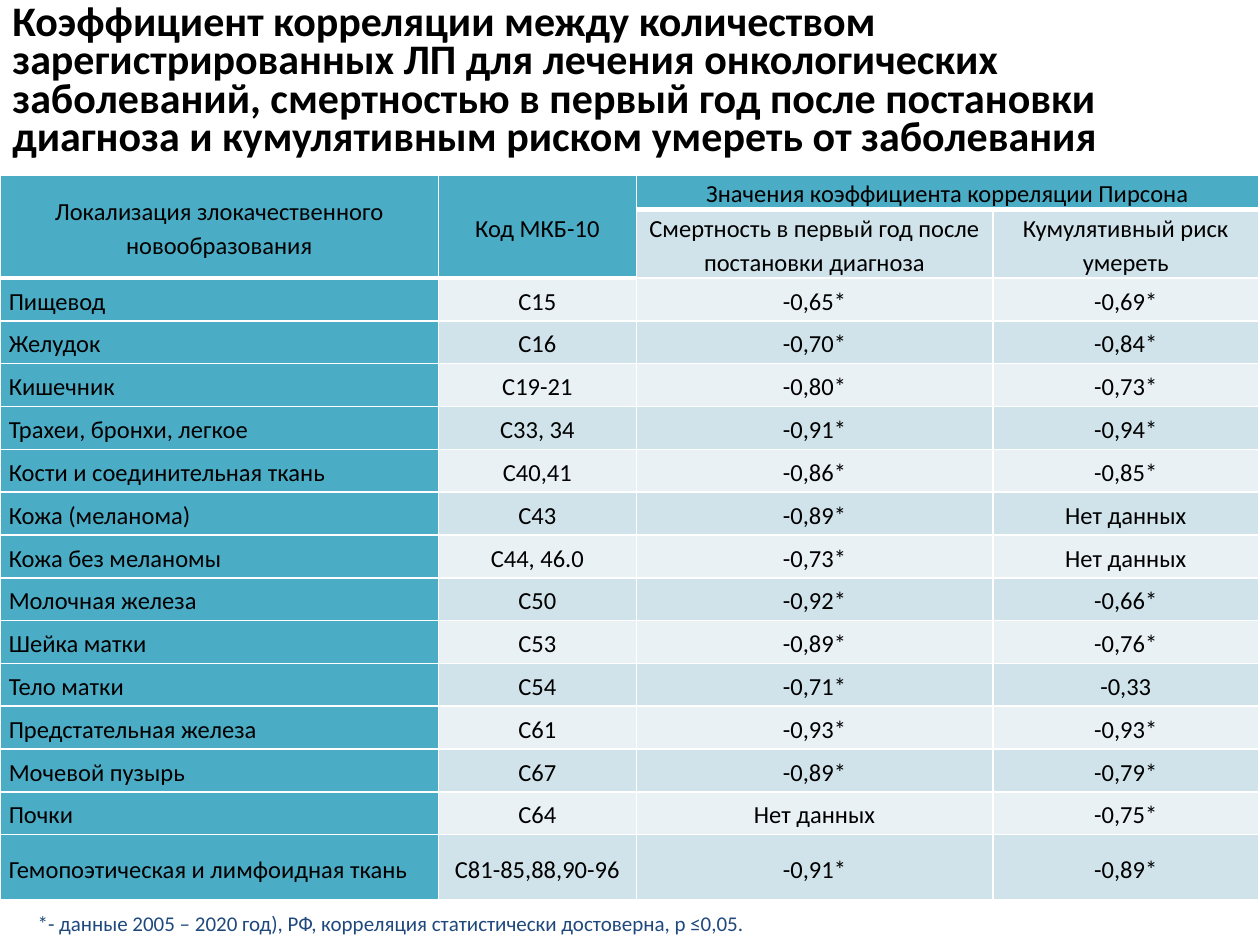
from pptx import Presentation
from pptx.dml.color import RGBColor
from pptx.enum.text import MSO_ANCHOR, PP_ALIGN
from pptx.oxml.ns import qn
from pptx.util import Inches, Pt
from lxml import etree

LEFT, CENTER, JUSTIFY = PP_ALIGN.LEFT, PP_ALIGN.CENTER, PP_ALIGN.JUSTIFY
MIDDLE = MSO_ANCHOR.MIDDLE

COLORS = {"accent": "4BACC6", "dark band": "D0E3EA", "light band": "E9F1F5",
          "border": "FFFFFF", "text": "000000", "note": "1F497D"}

# Content
TITLE = ("Коэффициент корреляции между количеством зарегистрированных ЛП для лечения "
         "онкологических заболеваний, смертностью в первый год после постановки "
         "диагноза и кумулятивным риском умереть от заболевания")
NOTE = "*- данные 2005 – 2020 год), РФ, корреляция статистически достоверна, р ≤0,05."
HEADER = [
    ("Локализация злокачественного новообразования", "Код МКБ-10",
     "Значения коэффициента корреляции Пирсона", ""),
    ("", "", "Смертность в первый год после постановки диагноза",
     "Кумулятивный риск умереть"),
]
CORRELATIONS = [
    ("Пищевод", "С15", "-0,65*", "-0,69*"),
    ("Желудок", "С16", "-0,70*", "-0,84*"),
    ("Кишечник", "C19-21", "-0,80*", "-0,73*"),
    ("Трахеи, бронхи, легкое", "C33, 34", "-0,91*", "-0,94*"),
    ("Кости и соединительная ткань", "C40,41", "-0,86*", "-0,85*"),
    ("Кожа (меланома)", "C43", "-0,89*", "Нет данных"),
    ("Кожа без меланомы", "C44, 46.0", "-0,73*", "Нет данных"),
    ("Молочная железа", "C50", "-0,92*", "-0,66*"),
    ("Шейка матки", "C53", "-0,89*", "-0,76*"),
    ("Тело матки", "C54", "-0,71*", "-0,33"),
    ("Предстательная железа", "C61", "-0,93*", "-0,93*"),
    ("Мочевой пузырь", "C67", "-0,89*", "-0,79*"),
    ("Почки", "C64", "Нет данных", "-0,75*"),
    ("Гемопоэтическая и лимфоидная ткань", "C81-85,88,90-96", "-0,91*", "-0,89*"),
]
ROWS = HEADER + CORRELATIONS
COLUMN_WIDTHS = [3.48, 1.57, 2.83, 2.11]
ROW_HEIGHTS = [0.25, 0.53] + [0.34] * (len(CORRELATIONS) - 1) + [0.52]
MERGES = [((0, 0), (1, 0)), ((0, 1), (1, 1)), ((0, 2), (0, 3))]


def write(frame, text, size=14, color="text", bold=False, align=LEFT, spacing=1.15):
    para = frame.paragraphs[0]
    para.alignment = align
    para.line_spacing = spacing
    span = para.add_run()
    span.text = text
    span.font.name = "Calibri"
    span.font.size = Pt(size)
    span.font.bold = bold
    span.font.color.rgb = RGBColor.from_string(COLORS[color])


def add_text(page, area, text, wrap=True, **style):
    box = page.shapes.add_textbox(*map(Inches, area))
    box.text_frame.word_wrap = wrap
    write(box.text_frame, text, **style)


def set_borders(cell, bottom):
    properties = cell._tc.get_or_add_tcPr()
    for side, width in (("L", 1), ("R", 1), ("T", 1), ("B", bottom)):
        line = etree.SubElement(properties, qn(f"a:ln{side}"), w=str(Pt(width)))
        fill = etree.SubElement(line, qn("a:solidFill"))
        etree.SubElement(fill, qn("a:srgbClr"), val=COLORS["border"])


def cell_color(row, column):
    if row == 0 or column == 0 or (row == 1 and column == 1):
        return "accent"
    return "dark band" if row % 2 else "light band"


def add_correlation_table(page):
    table = page.shapes.add_table(
        len(ROWS), len(COLUMN_WIDTHS), Inches(0), Inches(1.39),
        Inches(10), Inches(sum(ROW_HEIGHTS))).table
    for column, width in zip(table.columns, COLUMN_WIDTHS):
        column.width = Inches(width)
    for row, height in zip(table.rows, ROW_HEIGHTS):
        row.height = Inches(height)
    for first, last in MERGES:
        table.cell(*first).merge(table.cell(*last))

    for r, values in enumerate(ROWS):
        for c, text in enumerate(values):
            cell = table.cell(r, c)
            cell.margin_left = cell.margin_right = Inches(0.07)
            cell.margin_top = cell.margin_bottom = 0
            cell.vertical_anchor = MIDDLE
            set_borders(cell, bottom=3 if r == 0 else 1)
            cell.fill.solid()
            cell.fill.fore_color.rgb = RGBColor.from_string(COLORS[cell_color(r, c)])
            is_label = c == 0 and r >= len(HEADER)
            write(cell.text_frame, text, align=LEFT if is_label else CENTER)


def main():
    deck = Presentation()
    deck.slide_width, deck.slide_height = Inches(10), Inches(7.5)
    page = deck.slides.add_slide(deck.slide_layouts[6])

    # Table, title and footnote
    add_correlation_table(page)
    add_text(page, (0, 0, 10, 1.39), TITLE, size=24, bold=True, spacing=Pt(22))
    add_text(page, (0.2, 7.06, 5.89, 0.39), NOTE, wrap=False, size=12,
             color="note", align=JUSTIFY, spacing=Pt(23))
    deck.save("out.pptx")


if __name__ == "__main__":
    main()
